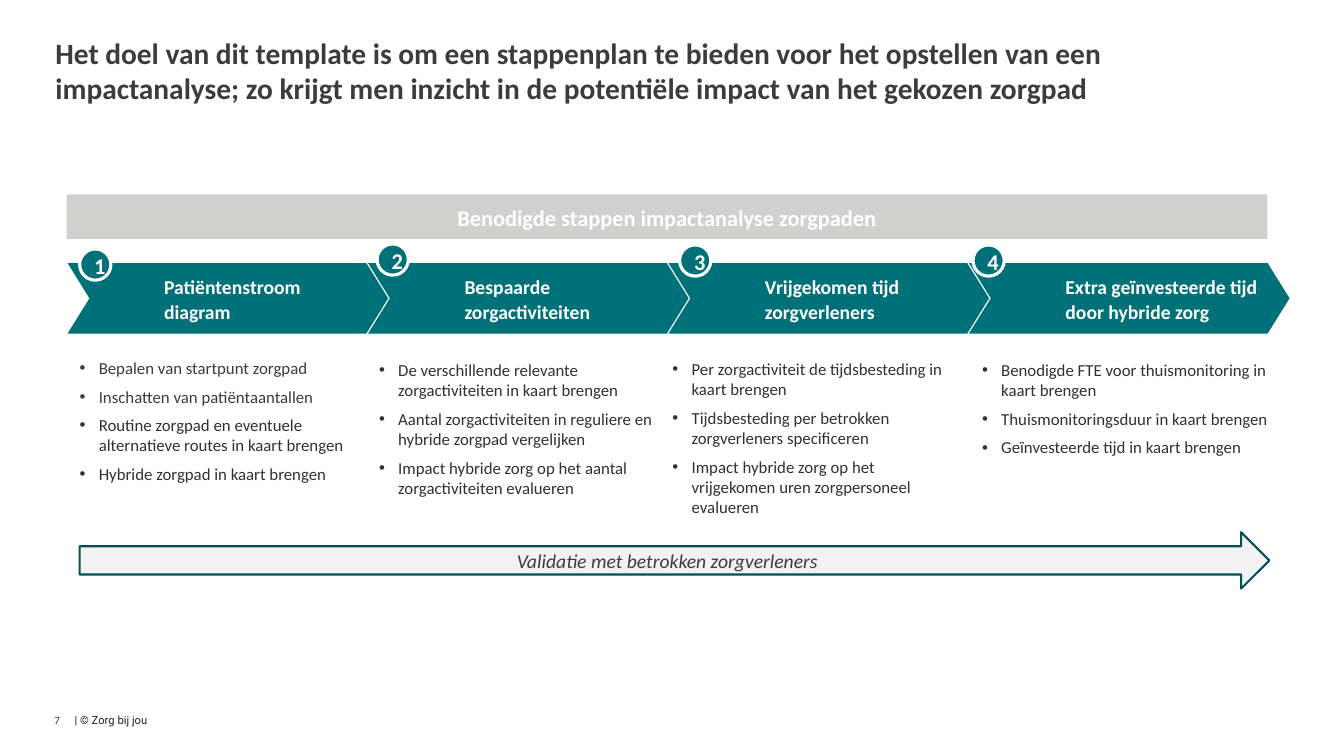
from lxml import etree
from pptx import Presentation
from pptx import util as u
from pptx.dml.color import RGBColor
from pptx.enum import shapes, text
from pptx.oxml.ns import qn

COLORS = {"teal": "007079", "dark_teal": "004F59", "silver": "D0D0CE", "pale": "F2F2F2",
          "white": "FFFFFF", "ink": "3C3C3C", "body": "313131", "footer": "202124"}
FONT = "Calibri"
INDENT = 0.19

# Column grid of the four steps, in inches
LEFT, PITCH = 0.67, 2.98
STEP_TOP, STEP_WIDTH, STEP_HEIGHT = 2.61, 3.18, 0.7
BADGE = 0.31
LIST_WIDTH, LIST_HEIGHT = 2.86, 2.69

# Heading, badge position, list position, bullets, number of leading bullets in ink
STEPS = [
    ("Patiëntenstroom\ndiagram", (0.79, 2.47), (0.79, 3.55),
     ["Bepalen van startpunt zorgpad",
      "Inschatten van patiëntaantallen",
      "Routine zorgpad en eventuele alternatieve routes in kaart brengen",
      "Hybride zorgpad in kaart brengen"], 2),
    ("Bespaarde zorgactiviteiten", (3.74, 2.42), (3.76, 3.57),
     ["De verschillende relevante zorgactiviteiten in kaart brengen",
      "Aantal zorgactiviteiten in reguliere en hybride zorgpad vergelijken",
      "Impact hybride zorg op het aantal zorgactiviteiten evalueren"], 0),
    ("Vrijgekomen tijd zorgverleners", (6.74, 2.43), (6.67, 3.56),
     ["Per zorgactiviteit de tijdsbesteding in kaart brengen",
      "Tijdsbesteding per betrokken zorgverleners specificeren",
      "Impact hybride zorg op het vrijgekomen uren zorgpersoneel evalueren"], 0),
    ("Extra geïnvesteerde tijd door hybride zorg", (9.65, 2.43), (9.74, 3.57),
     ["Benodigde FTE voor thuismonitoring in kaart brengen",
      "Thuismonitoringsduur in kaart brengen",
      "Geïnvesteerde tijd in kaart brengen"], 0),
]


def rgb(name):
    return RGBColor.from_string(COLORS[name])


def style(paragraph, size, color, font=FONT, bold=False, italic=False):
    for run in paragraph.runs:
        run.font.name, run.font.size = font, u.Pt(size)
        run.font.bold, run.font.italic = bold, italic
        run.font.color.rgb = rgb(color)


def set_insets(frame, left, others):
    frame.margin_left = u.Inches(left)
    frame.margin_top = frame.margin_right = frame.margin_bottom = u.Inches(others)


def add_text(slide, box, content, size, color, **look):
    frame = slide.shapes.add_textbox(*map(u.Inches, box)).text_frame
    frame.word_wrap = True
    set_insets(frame, 0, 0)
    frame.text = content
    for paragraph in frame.paragraphs:
        style(paragraph, size, color, **look)
    return frame


def add_block(slide, kind, box, fill, content, size, color, line=None,
              insets=(0.1, 0.1), align=text.PP_ALIGN.CENTER, **look):
    block = slide.shapes.add_shape(kind, *map(u.Inches, box))
    block.shadow.inherit = False
    block.fill.solid()
    block.fill.fore_color.rgb = rgb(fill)
    if line:
        block.line.color.rgb, block.line.width = rgb(line[0]), u.Pt(line[1])
    else:
        block.line.fill.background()
    frame = block.text_frame
    frame.word_wrap = True
    frame.vertical_anchor = text.MSO_ANCHOR.MIDDLE
    set_insets(frame, *insets)
    frame.text = content
    for paragraph in frame.paragraphs:
        paragraph.alignment, paragraph.line_spacing = align, 1.06
        style(paragraph, size, color, **look)
    return block


def add_step(slide, column, heading):
    box = (LEFT + column * PITCH, STEP_TOP, STEP_WIDTH, STEP_HEIGHT)
    step = add_block(slide, shapes.MSO_SHAPE.CHEVRON, box, "teal", heading, 14, "white",
                     insets=(0.24, 0), align=text.PP_ALIGN.LEFT, bold=True)
    step.adjustments[0] = 0.31
    for paragraph in step.text_frame.paragraphs:
        paragraph._p.get_or_add_pPr().set("marL", str(u.Inches(0.5)))


def add_badge(slide, number, position):
    add_block(slide, shapes.MSO_SHAPE.OVAL, (*position, BADGE, BADGE), "teal", str(number),
              16, "white", line=("white", 2.25), bold=True)


def add_bullets(slide, position, items, ink_count):
    frame = add_text(slide, (*position, LIST_WIDTH, LIST_HEIGHT), "\n".join(items), 12, "body")
    for index, paragraph in enumerate(frame.paragraphs):
        if index:
            paragraph.space_before = u.Pt(6)
        properties = paragraph._p.get_or_add_pPr()
        properties.set("marL", str(u.Inches(INDENT)))
        properties.set("indent", str(-u.Inches(INDENT)))
        etree.SubElement(properties, qn("a:buFont"), typeface="Arial")
        etree.SubElement(properties, qn("a:buChar"), char="•")
        if index < ink_count:
            style(paragraph, 12, "ink")


def main():
    deck = Presentation()
    deck.slide_width, deck.slide_height = u.Inches(13.33), u.Inches(7.5)
    slide = deck.slides.add_slide(deck.slide_layouts[6])

    # Title and banner
    add_text(slide, (0.55, 0.35, 12.24, 0.37),
             "Het doel van dit template is om een stappenplan te bieden voor het opstellen van "
             "een impactanalyse; zo krijgt men inzicht in de potentiële impact van het gekozen "
             "zorgpad", 21, "ink", bold=True)
    add_block(slide, shapes.MSO_SHAPE.RECTANGLE, (0.66, 1.93, 11.91, 0.44), "silver",
              "Benodigde stappen impactanalyse zorgpaden", 16, "white", bold=True)

    # Steps first, so that the badges lie on top of every chevron
    for column, (heading, *_) in enumerate(STEPS):
        add_step(slide, column, heading)
    for number, (_, badge, list_position, items, ink_count) in enumerate(STEPS, 1):
        add_badge(slide, number, badge)
        add_bullets(slide, list_position, items, ink_count)

    # Validation arrow
    add_block(slide, shapes.MSO_SHAPE.RIGHT_ARROW, (0.79, 5.28, 11.8, 0.56), "pale",
              "Validatie met betrokken zorgverleners", 14, "ink",
              line=("dark_teal", 1.5), italic=True)

    # Footer
    add_text(slide, (0.54, 7.08, 0.18, 0.13), "7", 8, "ink")
    footer = add_text(slide, (0.74, 7.08, 5.86, 0.13), "|\u00a0 © Zorg bij jou".replace("\u00a0 ", " "),
                      8, "footer", font="Roboto")
    footer.word_wrap = True

    deck.save("out.pptx")


if __name__ == "__main__":
    main()
